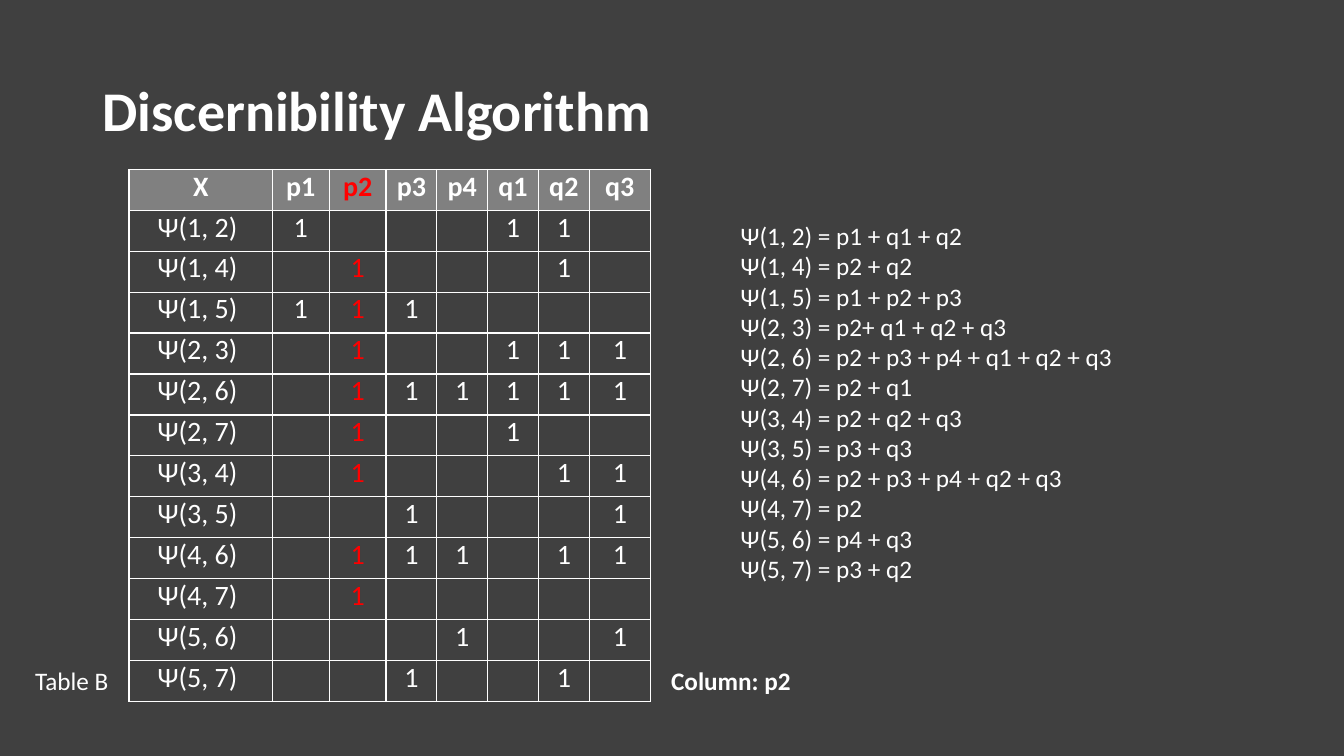
from lxml import etree
from pptx import Presentation
from pptx.dml.color import RGBColor
from pptx.enum.text import MSO_ANCHOR, MSO_AUTO_SIZE, PP_ALIGN
from pptx.oxml.ns import qn
from pptx.util import Pt

LEFT, CENTER = PP_ALIGN.LEFT, PP_ALIGN.CENTER
MIDDLE = MSO_ANCHOR.MIDDLE
NO_FIT, GROW = MSO_AUTO_SIZE.NONE, MSO_AUTO_SIZE.SHAPE_TO_FIT_TEXT

FONT = "Calibri"
COLORS = {"background": "404040", "header": "808080", "text": "FFFFFF", "chosen": "FF0000"}
TITLE_ONLY = 5

ATTRIBUTES = ["p1", "p2", "p3", "p4", "q1", "q2", "q3"]
CHOSEN = "p2"
FORMULAS = [
    "Ψ(1, 2) = p1 + q1 + q2",
    "Ψ(1, 4) = p2 + q2",
    "Ψ(1, 5) = p1 + p2 + p3",
    "Ψ(2, 3) = p2+ q1 + q2 + q3",
    "Ψ(2, 6) = p2 + p3 + p4 + q1 + q2 + q3",
    "Ψ(2, 7) = p2 + q1",
    "Ψ(3, 4) = p2 + q2 + q3",
    "Ψ(3, 5) = p3 + q3",
    "Ψ(4, 6) = p2 + p3 + p4 + q2 + q3",
    "Ψ(4, 7) = p2",
    "Ψ(5, 6) = p4 + q3",
    "Ψ(5, 7) = p3 + q2",
]
COLUMN_WIDTHS = [102.4, 40.6, 40.6, 36.3, 36.3, 36.3, 36.3, 43.7]
ROW_HEIGHT = 29.25


def color(name):
    return RGBColor.from_string(COLORS[name])


def format_text(frame, size, bold=False, tint="text"):
    for para in frame.paragraphs:
        for span in para.runs:
            span.font.name = FONT
            span.font.size = Pt(size)
            span.font.bold = bold
            span.font.color.rgb = color(tint)


def add_title(page, text):
    title = page.shapes.title
    title.left, title.top, title.width, title.height = Pt(66), Pt(28.8), Pt(828), Pt(104.4)
    frame = title.text_frame
    frame.text = text
    frame.auto_size = NO_FIT
    frame.vertical_anchor = MIDDLE
    frame.paragraphs[0].alignment = LEFT
    frame.paragraphs[0].line_spacing = 0.9
    format_text(frame, 40, bold=True)


def add_text(page, text, left, top, width, height, bold=False, indent=0):
    box = page.shapes.add_textbox(Pt(left), Pt(top), Pt(width), Pt(height))
    frame = box.text_frame
    frame.word_wrap = True
    frame.auto_size = GROW
    frame.text = text
    for para in frame.paragraphs:
        if indent:
            para.level = 1
            para._p.get_or_add_pPr().set("marL", str(Pt(indent)))
    format_text(frame, 18, bold)


def add_borders(cell):
    properties = cell._tc.get_or_add_tcPr()
    for position, side in enumerate(["lnL", "lnR", "lnT", "lnB"]):
        line = etree.Element(qn(f"a:{side}"), w=str(Pt(1)))
        fill = etree.SubElement(line, qn("a:solidFill"))
        etree.SubElement(fill, qn("a:srgbClr"), val=COLORS["text"])
        properties.insert(position, line)


def fill_cell(cell, text, header, chosen):
    cell.margin_left = cell.margin_right = Pt(5.4)
    cell.margin_top = cell.margin_bottom = 0
    if header:
        cell.fill.solid()
        cell.fill.fore_color.rgb = color("header")
    else:
        cell.fill.background()
    cell.text_frame.text = text
    cell.text_frame.paragraphs[0].alignment = CENTER
    format_text(cell.text_frame, 20, header, "chosen" if chosen else "text")
    add_borders(cell)


def table_rows():
    """A formula marks each attribute it contains with a 1."""
    rows = [["X"] + ATTRIBUTES]
    for formula in FORMULAS:
        label, terms = formula.split("=")
        rows.append([label] + ["1" if name in terms else "" for name in ATTRIBUTES])
    return rows


def add_discernibility_table(page, left, top):
    rows = table_rows()
    table = page.shapes.add_table(
        len(rows), len(COLUMN_WIDTHS), Pt(left), Pt(top),
        Pt(sum(COLUMN_WIDTHS)), Pt(ROW_HEIGHT * len(rows))).table
    table.horz_banding = False
    for column, width in zip(table.columns, COLUMN_WIDTHS):
        column.width = Pt(width)
    for r, values in enumerate(rows):
        table.rows[r].height = Pt(ROW_HEIGHT)
        for c, value in enumerate(values):
            fill_cell(table.cell(r, c), value, r == 0, rows[0][c] == CHOSEN)


def main():
    deck = Presentation()
    deck.slide_width, deck.slide_height = Pt(960), Pt(540)
    page = deck.slides.add_slide(deck.slide_layouts[TITLE_ONLY])
    page.background.fill.solid()
    page.background.fill.fore_color.rgb = color("background")

    # Title and table
    add_title(page, "Discernibility Algorithm")
    add_discernibility_table(page, 92.2, 121)

    # Formulas and captions
    add_text(page, "\n".join(FORMULAS), 486, 154, 369.4, 269.3, indent=36)
    add_text(page, f"Column: {CHOSEN}", 472.3, 471.6, 111.6, 28.8, bold=True)
    add_text(page, "Table B", 18, 471.6, 480, 28.8)

    deck.save("out.pptx")


if __name__ == "__main__":
    main()
